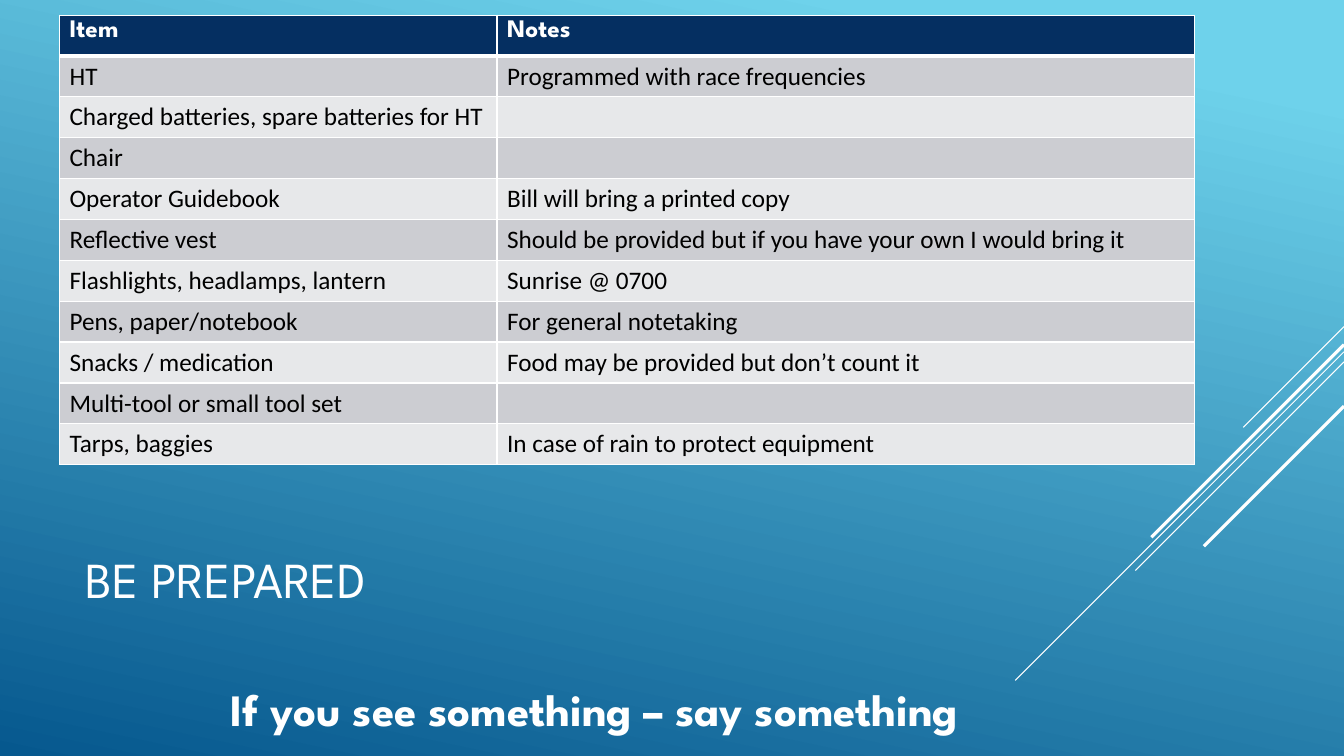
"""Build the "Be prepared" slide with its packing list table."""
from dataclasses import dataclass

import pptx
import pptx.dml.color
import pptx.enum.shapes
import pptx.enum.text
import pptx.oxml
import pptx.oxml.ns
import pptx.util
from pptx.util import Inches

WHITE = pptx.dml.color.RGBColor(0xFF, 0xFF, 0xFF)
BLACK = pptx.dml.color.RGBColor(0x00, 0x00, 0x00)
NAVY = pptx.dml.color.RGBColor(0x05, 0x2F, 0x61)
GREY = pptx.dml.color.RGBColor(0xCC, 0xCD, 0xD2)
PALE = pptx.dml.color.RGBColor(0xE7, 0xE8, 0xEA)
SKY = pptx.dml.color.RGBColor(0x6E, 0xD2, 0xEB)
OCEAN = pptx.dml.color.RGBColor(0x06, 0x58, 0x8E)

HEADING_FONT = "League Spartan"
BODY_FONT = "Calibri"
SLIDE_WIDTH = 13.33
COLUMN_WIDTHS = (4.34, 6.92)


@dataclass
class Streak:
    top: float
    run: float
    weight: float


@dataclass
class Label:
    text: str
    left: float
    top: float
    width: float
    height: float
    size: float
    bold: bool
    wrap: bool
    anchor: pptx.enum.text.MSO_ANCHOR
    auto_size: pptx.enum.text.MSO_AUTO_SIZE


@dataclass
class Item:
    name: str
    note: str = ""


STREAKS = [
    Streak(3.24, 1.0, 0.75),
    Streak(3.49, 3.26, 0.75),
    Streak(3.59, 2.07, 0.75),
    Streak(3.42, 1.91, 2.25),
    Streak(4.03, 1.39, 2.25),
]

LABELS = [
    Label("BE PREPARED", 0.75, 4.91, 9.33, 1.65, 36, False, True,
          pptx.enum.text.MSO_ANCHOR.MIDDLE, pptx.enum.text.MSO_AUTO_SIZE.NONE),
    Label("If you see something – say something", 2.19, 6.71, 8.33, 0.64, 32, True, False,
          pptx.enum.text.MSO_ANCHOR.TOP, pptx.enum.text.MSO_AUTO_SIZE.SHAPE_TO_FIT_TEXT),
]

ITEMS = [
    Item("Item", "Notes"),
    Item("HT", "Programmed with race frequencies"),
    Item("Charged batteries, spare batteries for HT"),
    Item("Chair"),
    Item("Operator Guidebook", "Bill will bring a printed copy"),
    Item("Reflective vest", "Should be provided but if you have your own I would bring it"),
    Item("Flashlights, headlamps, lantern", "Sunrise @ 0700"),
    Item("Pens, paper/notebook", "For general notetaking"),
    Item("Snacks / medication", "Food may be provided but don’t count it"),
    Item("Multi-tool or small tool set"),
    Item("Tarps, baggies", "In case of rain to protect equipment"),
]


def paint_background(s: pptx.slide.Slide) -> None:
    fill = s.background.fill
    fill.gradient()
    fill.gradient_angle = 258
    for stop, position, color in zip(fill.gradient_stops, (0.1, 1.0), (SKY, OCEAN)):
        stop.position = position
        stop.color.rgb = color


def draw_streak(s: pptx.slide.Slide, streak: Streak) -> None:
    line = s.shapes.add_connector(
        pptx.enum.shapes.MSO_CONNECTOR.STRAIGHT,
        Inches(SLIDE_WIDTH), Inches(streak.top),
        Inches(SLIDE_WIDTH - streak.run), Inches(streak.top + streak.run))
    line.line.color.rgb = WHITE
    line.line.width = pptx.util.Pt(streak.weight)
    pptx.oxml.ns.qn("a:effectLst")
    sp_pr = line.element.spPr
    sp_pr.append(sp_pr.makeelement(pptx.oxml.ns.qn("a:effectLst"), {}))


def format_runs(p: pptx.text.text._Paragraph, font: str, size: float, bold: bool,
                color: pptx.dml.color.RGBColor) -> None:
    for r in p.runs:
        r.font.name = font
        r.font.size = pptx.util.Pt(size)
        r.font.bold = bold
        r.font.color.rgb = color


def draw_label(s: pptx.slide.Slide, label: Label) -> None:
    sp = s.shapes.add_textbox(Inches(label.left), Inches(label.top),
                              Inches(label.width), Inches(label.height))
    tf = sp.text_frame
    tf.word_wrap = label.wrap
    tf.auto_size = label.auto_size
    tf.vertical_anchor = label.anchor
    tf.text = label.text
    format_runs(tf.paragraphs[0], HEADING_FONT, label.size, label.bold, WHITE)


def set_borders(cell: pptx.table._Cell, top: float, bottom: float) -> None:
    tc_pr = cell._tc.get_or_add_tcPr()
    for side, weight in (("L", 1), ("R", 1), ("T", top), ("B", bottom)):
        tc_pr.append(pptx.oxml.parse_xml(
            f'<a:ln{side} {pptx.oxml.ns.nsdecls("a")} w="{pptx.util.Pt(weight)}">'
            f'<a:solidFill><a:srgbClr val="{WHITE}"/></a:solidFill></a:ln{side}>'))


def draw_table(s: pptx.slide.Slide, items: list[Item]) -> None:
    table = s.shapes.add_table(len(items), len(COLUMN_WIDTHS), Inches(0.59), Inches(0.15),
                               Inches(sum(COLUMN_WIDTHS)), Inches(4.46)).table
    for column, width in zip(table.columns, COLUMN_WIDTHS):
        column.width = Inches(width)
    for row, item in enumerate(items):
        header = row == 0
        fill = NAVY if header else (PALE, GREY)[row % 2]
        for column, text in enumerate((item.name, item.note)):
            cell = table.cell(row, column)
            set_borders(cell, 3 if row == 1 else 1, 3 if header else 1)
            cell.fill.solid()
            cell.fill.fore_color.rgb = fill
            cell.text_frame.text = text
            format_runs(cell.text_frame.paragraphs[0], HEADING_FONT if header else BODY_FONT,
                        18, header, WHITE if header else BLACK)


def main() -> None:
    prs = pptx.Presentation()
    prs.slide_width = Inches(SLIDE_WIDTH)
    prs.slide_height = Inches(7.5)
    s = prs.slides.add_slide(prs.slide_layouts[6])
    paint_background(s)
    for streak in STREAKS:
        draw_streak(s, streak)
    title, tagline = LABELS
    draw_label(s, title)
    draw_table(s, ITEMS)
    draw_label(s, tagline)
    prs.save("out.pptx")


if __name__ == "__main__":
    main()
